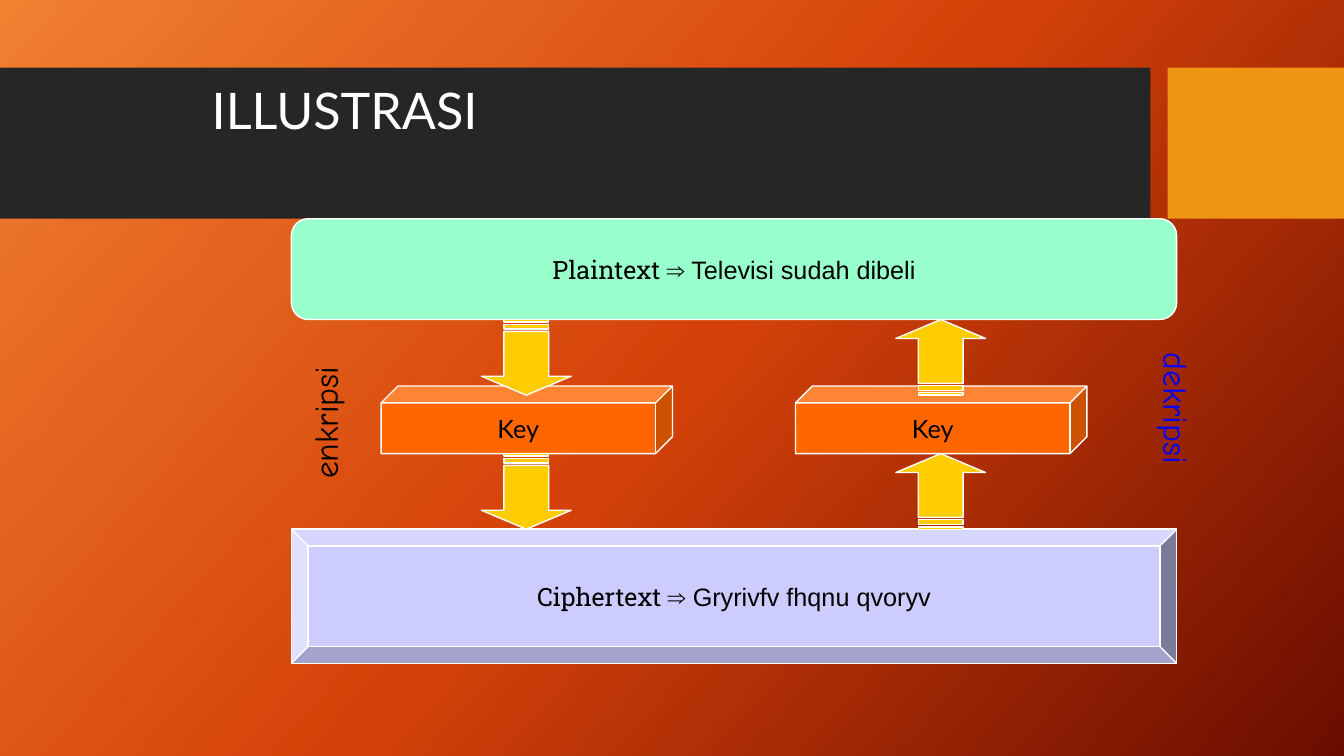
import copy
from dataclasses import dataclass

import pptx
import pptx.util
from pptx.dml.color import RGBColor
from pptx.enum.shapes import MSO_SHAPE
from pptx.enum.text import MSO_ANCHOR, MSO_AUTO_SIZE, PP_ALIGN
from pptx.oxml.ns import qn
from pptx.util import Inches


@dataclass(frozen=True)
class Theme:
    gradient: tuple = ((0, "F18031"), (0.5, "D54209"), (1, "6A0D00"))
    band: str = "262626"
    accent: str = "F09415"
    white: str = "FFFFFF"
    black: str = "000000"
    plain: str = "99FFCC"
    cipher: str = "CCCCFF"
    key: str = "FF6600"
    arrow: str = "FFCC00"
    decrypt: str = "0000FF"
    title_font: str = "Lato"
    term_font: str = "Roboto Slab"
    body_font: str = "Arial"
    label_font: str = "Comic Neue"
    title_size: int = 36
    body_size: int = 18
    label_size: int = 24


THEME = Theme()


def style_run(r, font, size, color):
    r.font.name = font
    r.font.size = pptx.util.Pt(size)
    r.font.color.rgb = RGBColor.from_string(color)


def add_block(s, kind, box, fill, line=None):
    sp = s.shapes.add_shape(kind, *map(Inches, box))
    sp.shadow.inherit = False
    sp.fill.solid()
    sp.fill.fore_color.rgb = RGBColor.from_string(fill)
    if line:
        sp.line.color.rgb = RGBColor.from_string(line)
        sp.line.width = pptx.util.Pt(1)
    else:
        sp.line.fill.background()
    return sp


def add_text_block(s, kind, box, fill, parts):
    """Outlined shape with centred text made of (text, font) parts."""
    sp = add_block(s, kind, box, fill, THEME.white)
    tf = sp.text_frame
    tf.word_wrap = False
    tf.vertical_anchor = MSO_ANCHOR.MIDDLE
    p = tf.paragraphs[0]
    p.alignment = PP_ALIGN.CENTER
    for text, font in parts:
        r = p.add_run()
        r.text = text
        style_run(r, font, THEME.body_size, THEME.black)


def add_arrow(s, cx, top, length, rotation):
    """Striped arrow spanning length downwards from top, centred on cx."""
    breadth = 0.89
    box = (cx - length / 2, top + (length - breadth) / 2, length, breadth)
    sp = add_block(s, MSO_SHAPE.STRIPED_RIGHT_ARROW, box, THEME.arrow, THEME.white)
    sp.adjustments[1] = 0.25
    sp.rotation = rotation


def add_side_label(s, cx, cy, width, text, color, rotation):
    height = 0.5
    sp = s.shapes.add_textbox(*map(Inches, (cx - width / 2, cy - height / 2, width, height)))
    sp.rotation = rotation
    tf = sp.text_frame
    tf.word_wrap = False
    tf.auto_size = MSO_AUTO_SIZE.SHAPE_TO_FIT_TEXT
    tf.text = text
    style_run(tf.paragraphs[0].runs[0], THEME.label_font, THEME.label_size, color)


def paint_background(s):
    fill = s.background.fill
    fill.gradient()
    fill.gradient_angle = 360 - 42
    stop_list = next(s.element.iter(qn("a:gsLst")))
    stop_list.append(copy.deepcopy(stop_list[-1]))
    for stop, (position, color) in zip(fill.gradient_stops, THEME.gradient):
        stop.position = position
        stop.color.rgb = RGBColor.from_string(color)


def build_header(s, left, top, width, height, text):
    accent_width, gap = 1.75, 0.17
    band_width = width - accent_width - gap
    add_block(s, MSO_SHAPE.RECTANGLE, (left, top, band_width, height), THEME.band)
    add_block(s, MSO_SHAPE.RECTANGLE,
              (left + width - accent_width, top, accent_width, height), THEME.accent)

    title = s.shapes.title
    title.element.getparent().append(title.element)  # in front of the band
    title.left, title.top = Inches(left + 2), Inches(top - 0.09)
    title.width, title.height = Inches(11), Inches(1.08)
    tf = title.text_frame
    tf.text = text
    tf.word_wrap = True
    tf.auto_size = MSO_AUTO_SIZE.NONE
    tf.vertical_anchor = MSO_ANCHOR.MIDDLE
    p = tf.paragraphs[0]
    p.alignment = PP_ALIGN.JUSTIFY
    p.line_spacing = 0.9
    style_run(p.runs[0], THEME.title_font, THEME.title_size, THEME.white)


def build_key_path(s, left, top, height, rotation):
    """Key with an arrow above and one below, within the given height."""
    key_top, length = top + 0.66, 0.75
    add_text_block(s, MSO_SHAPE.CUBE, (left, key_top, 2.89, 0.67), THEME.key,
                   [("Key", THEME.title_font)])
    for arrow_top in (top, top + height - length):
        add_arrow(s, left + 1.44, arrow_top, length, rotation)


def build_cipher_diagram(s, left, top, width, height):
    plain_height, cipher_height = 1, 1.33
    cipher_top = top + height - cipher_height
    path_top = top + plain_height
    add_text_block(s, MSO_SHAPE.ROUNDED_RECTANGLE, (left, top, width, plain_height),
                   THEME.plain, [("Plaintext ", THEME.term_font),
                                 ("⇒ Televisi sudah dibeli", THEME.body_font)])
    add_text_block(s, MSO_SHAPE.BEVEL, (left, cipher_top, width, cipher_height),
                   THEME.cipher, [("Ciphertext ", THEME.term_font),
                                  ("⇒ Gryrivfv fhqnu qvoryv", THEME.body_font)])
    for offset, rotation in ((0.89, 90), (5, 270)):
        build_key_path(s, left + offset, path_top, cipher_top - path_top, rotation)
    label_y = path_top + 0.96
    add_side_label(s, left + 0.33, label_y, 1.44, "enkripsi", THEME.black, 270)
    add_side_label(s, left + width, label_y, 1.46, "dekripsi", THEME.decrypt, 90)


def main():
    prs = pptx.Presentation()
    prs.slide_width, prs.slide_height = Inches(13.33), Inches(7.5)
    s = prs.slides.add_slide(prs.slide_layouts[5])
    paint_background(s)
    build_header(s, 0, 0.67, 13.33, 1.5, "ILLUSTRASI")
    build_cipher_diagram(s, 2.89, 2.17, 8.78, 4.41)
    prs.save("out.pptx")


if __name__ == "__main__":
    main()
